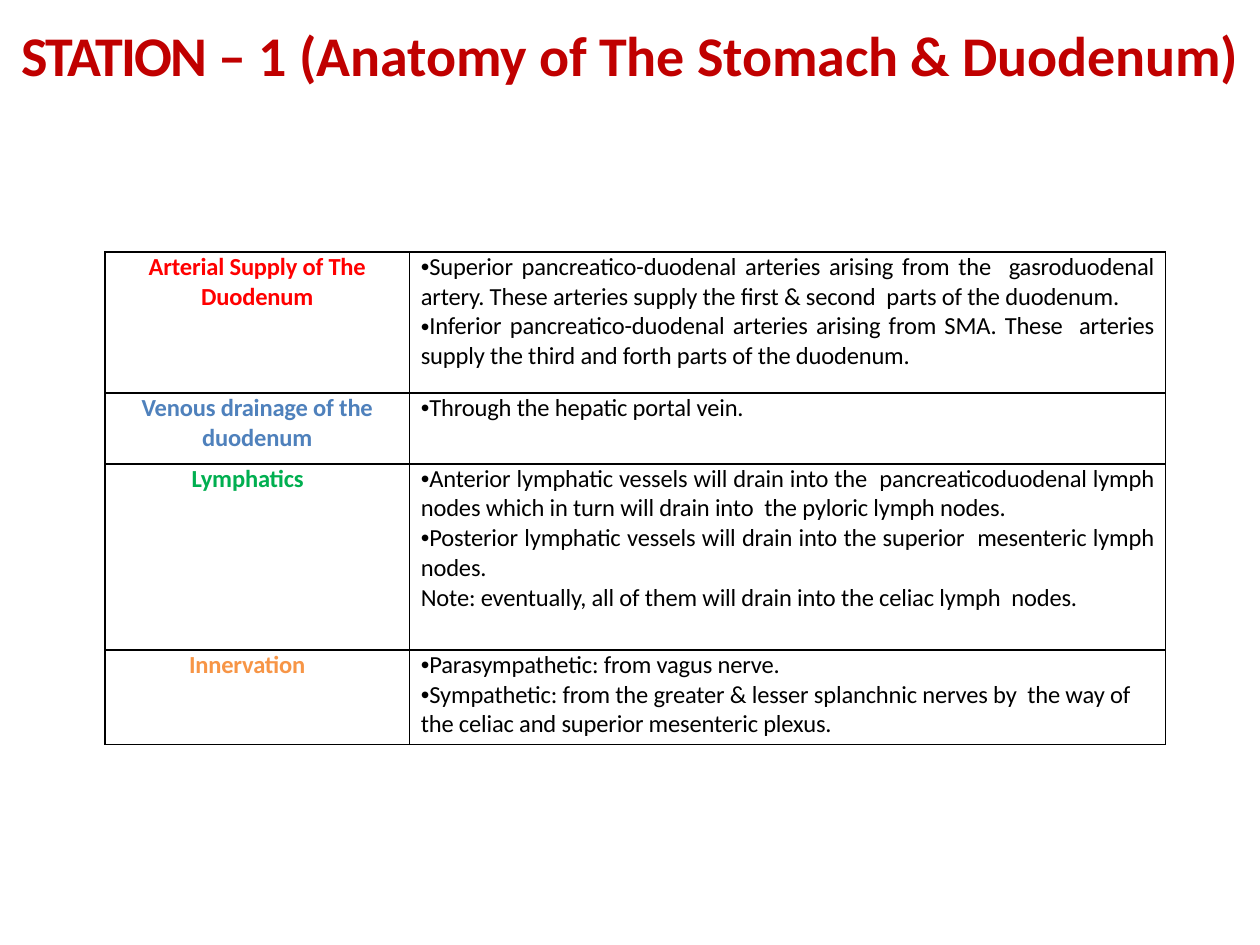
from dataclasses import dataclass

import lxml.etree
import pptx
import pptx.dml.color
import pptx.enum.text
import pptx.oxml.ns
import pptx.util

Pt = pptx.util.Pt
RGB = pptx.dml.color.RGBColor.from_string
Align = pptx.enum.text.PP_ALIGN
qn = pptx.oxml.ns.qn


@dataclass(frozen=True)
class Theme:
    font: str = "Calibri"
    bullet_font: str = "Arial"
    title_size: float = 32
    table_size: float = 14
    title: str = "C00000"
    ink: str = "000000"
    artery: str = "FF0000"
    vein: str = "4F81BC"
    lymph: str = "00AF50"
    nerve: str = "F79546"
    border: float = 1
    spacing: float = -0.1
    title_lead_spacing: float = -1


@dataclass(frozen=True)
class Topic:
    label: tuple[str, ...]
    color: str
    height: float
    points: tuple[str, ...]
    note: str = ""
    label_indent: float = 0  # zero means a centred label
    justified: bool = False


THEME = Theme()
COLUMN_WIDTHS = (174, 432)
CELL_PADDING = 6.5

TOPICS = (
    Topic(("Arterial Supply of The", "Duodenum"), THEME.artery, 80.6, (
        "Superior pancreatico-duodenal arteries arising from the  gasroduodenal artery. "
        "These arteries supply the first & second  parts of the duodenum.",
        "Inferior pancreatico-duodenal arteries arising from SMA. "
        "These  arteries supply the third and forth parts of the duodenum.",
    ), justified=True),
    Topic(("Venous drainage of the", "duodenum"), THEME.vein, 40.5,
          ("Through the hepatic portal vein.",)),
    Topic(("Lymphatics",), THEME.lymph, 106.4, (
        "Anterior lymphatic vessels will drain into the  pancreaticoduodenal lymph nodes "
        "which in turn will drain into  the pyloric lymph nodes.",
        "Posterior lymphatic vessels will drain into the superior  mesenteric lymph nodes.",
    ), note="Note: eventually, all of them will drain into the celiac lymph  nodes.",
        label_indent=49.5, justified=True),
    Topic(("Innervation",), THEME.nerve, 54, (
        "Parasympathetic: from vagus nerve.",
        "Sympathetic: from the greater & lesser splanchnic nerves by  the way "
        "of the celiac and superior mesenteric plexus.",
    ), label_indent=48),
)


def set_attributes(target, values: dict) -> None:
    for name, value in values.items():
        setattr(target, name, value)


def add_run(paragraph, text: str, size: float, color: str, bold: bool,
            spacing: float = THEME.spacing) -> None:
    run = paragraph.add_run()
    run.text = text
    set_attributes(run.font, {"name": THEME.font, "size": Pt(size), "bold": bold})
    run.font.color.rgb = RGB(color)
    run.font._element.set("spc", str(round(spacing * 100)))


def add_bullet(paragraph) -> None:
    properties = paragraph._p.get_or_add_pPr()
    set_attributes_xml = {"marL": "0", "indent": "0"}
    for name, value in set_attributes_xml.items():
        properties.set(name, value)
    lxml.etree.SubElement(properties, qn("a:buFont")).set("typeface", THEME.bullet_font)
    lxml.etree.SubElement(properties, qn("a:buChar")).set("char", "•")


def add_lines(cell, lines: list[tuple[str, bool]], color: str, bold: bool, alignment) -> None:
    frame = cell.text_frame
    for index, (text, bulleted) in enumerate(lines):
        paragraph = frame.add_paragraph() if index else frame.paragraphs[0]
        if bulleted:
            add_bullet(paragraph)
        paragraph.alignment = alignment
        add_run(paragraph, text, THEME.table_size, color, bold)


def format_cell(cell, left: float, right: float) -> None:
    set_attributes(cell, {"margin_left": Pt(left), "margin_right": Pt(right),
                          "margin_top": 0, "margin_bottom": 0})
    properties = cell._tc.get_or_add_tcPr()
    for side in ("lnL", "lnR", "lnT", "lnB"):
        line = lxml.etree.SubElement(properties, qn(f"a:{side}"), w=str(Pt(THEME.border)))
        fill = lxml.etree.SubElement(line, qn("a:solidFill"))
        lxml.etree.SubElement(fill, qn("a:srgbClr"), val=THEME.ink)
    cell.fill.background()


def add_title(slide) -> None:
    box = slide.shapes.add_textbox(Pt(0), Pt(12), Pt(720), Pt(85))
    frame = box.text_frame
    set_attributes(frame, {"margin_left": 0, "margin_right": 0, "margin_top": 0,
                           "margin_bottom": 0, "word_wrap": True})
    paragraph = frame.paragraphs[0]
    paragraph.alignment = Align.CENTER
    add_run(paragraph, "STATION ", THEME.title_size, THEME.title, True,
            THEME.title_lead_spacing)
    add_run(paragraph, "– 1 (Anatomy of The Stomach & Duodenum)",
            THEME.title_size, THEME.title, True)


def add_topic_table(slide, topics: tuple[Topic, ...]) -> None:
    table = slide.shapes.add_table(
        len(topics), len(COLUMN_WIDTHS), Pt(60), Pt(144), Pt(sum(COLUMN_WIDTHS)),
        Pt(sum(topic.height for topic in topics))).table
    set_attributes(table, {"first_row": False, "horz_banding": False})
    for column, width in zip(table.columns, COLUMN_WIDTHS):
        column.width = Pt(width)
    for row, topic in zip(table.rows, topics):
        row.height = Pt(topic.height)
        label, body = row.cells
        format_cell(label, topic.label_indent, 0)
        add_lines(label, [(text, False) for text in topic.label], topic.color, True,
                  Align.LEFT if topic.label_indent else Align.CENTER)
        format_cell(body, CELL_PADDING, CELL_PADDING)
        lines = [(text, True) for text in topic.points]
        if topic.note:
            lines.append((topic.note, False))
        add_lines(body, lines, THEME.ink, False,
                  Align.JUSTIFY if topic.justified else Align.LEFT)


def main() -> None:
    presentation = pptx.Presentation()
    set_attributes(presentation, {"slide_width": Pt(720), "slide_height": Pt(540)})
    slide = presentation.slides.add_slide(presentation.slide_layouts[6])
    # Anatomy facts, one topic a row
    add_topic_table(slide, TOPICS)
    # Station heading
    add_title(slide)
    presentation.save("out.pptx")


if __name__ == "__main__":
    main()
